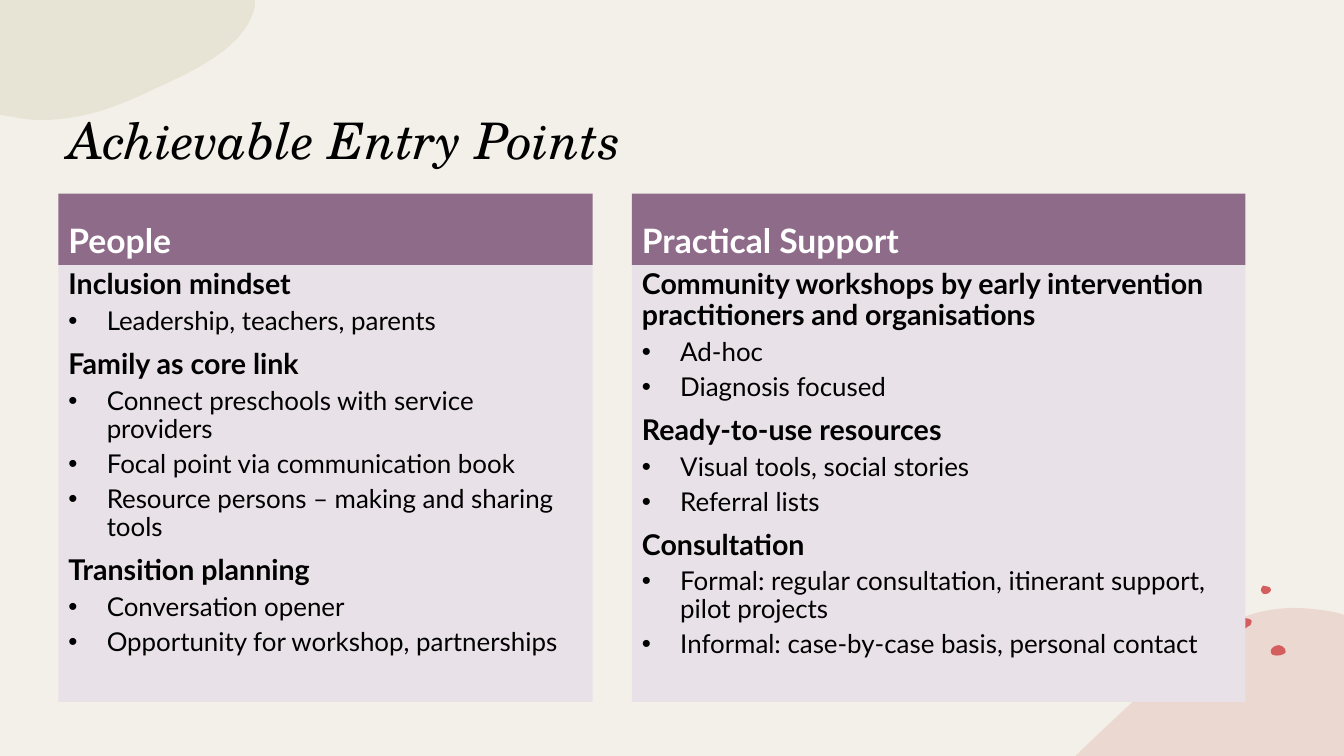
from dataclasses import dataclass

from lxml import etree
from pptx import Presentation
from pptx.dml.color import RGBColor
from pptx.enum.text import MSO_ANCHOR, MSO_AUTO_SIZE, PP_ALIGN
from pptx.oxml.ns import qn
from pptx.util import Inches, Pt

BOTTOM, TOP = MSO_ANCHOR.BOTTOM, MSO_ANCHOR.TOP
NO_AUTOFIT = MSO_AUTO_SIZE.NONE
LEFT = PP_ALIGN.LEFT

COMPARISON_LAYOUT = 4
COLUMNS, ROWS = 160, 90
CELL = Inches(7.5) / ROWS

Point = tuple[float, float]


@dataclass(frozen=True)
class Theme:
    background: str = "F3F0E9"
    header: str = "8F6B8A"
    panel: str = "E9E1E8"
    sage: str = "DCD9C3"
    blush: str = "E5C4BA"
    coral: str = "D45E5E"
    text: str = "000000"
    header_text: str = "FFFFFF"
    title_font: str = "TeX Gyre Schola"
    body_font: str = "Lato"
    title_size: float = 36
    header_size: float = 24
    topic_size: float = 20.4
    point_size: float = 18.5


@dataclass(frozen=True)
class Blob:
    """Closed outline: each segment is a line (one point) or a cubic curve (three)."""
    color: str
    start: Point
    segments: list[list[Point]]
    opacity: int = 100


@dataclass(frozen=True)
class Topic:
    name: str
    points: list[str]


@dataclass(frozen=True)
class Panel:
    heading: str
    left: float
    width: float
    topics: list[Topic]


THEME = Theme()
MARGIN = 6.95
TITLE_TOP, TITLE_WIDTH, TITLE_HEIGHT = 10.3, 132.25, 10.45
HEADER_TOP, HEADER_HEIGHT, BODY_HEIGHT = 23.05, 8.5, 52

BLOBS = [
    Blob(THEME.blush, (154.56, 72.36), [
        [(156.12, 72.48), (157.68, 72.6), (159.24, 72.96)],
        [(COLUMNS, 73.2)], [(COLUMNS, ROWS)], [(128.04, ROWS)], [(128.16, 89.88)],
        [(132.24, 85.92), (136.44, 82.08), (140.28, 78.48)],
        [(142.92, 75.84), (145.68, 74.28), (148.44, 73.32)],
        [(150.48, 72.6), (152.52, 72.36), (154.56, 72.36)]], 50),
    Blob(THEME.coral, (152.28, 76.8), [
        [(152.52, 76.8), (152.88, 77.04), (153, 77.28)],
        [(153.12, 77.52), (153.12, 77.76), (152.76, 77.88)],
        [(152.4, 78.12), (151.44, 78.12), (151.32, 77.76)],
        [(151.2, 77.52), (151.32, 77.28), (151.44, 77.16)],
        [(151.68, 76.92), (151.92, 76.8), (152.28, 76.8)]]),
    Blob(THEME.coral, (150.12, 70.32), [
        [(150.12, 70.32), (150.12, 69.84), (150.36, 69.72)],
        [(150.6, 69.72), (150.72, 69.72), (150.96, 69.84)],
        [(151.08, 69.84), (151.32, 69.96), (151.32, 70.2)],
        [(151.32, 70.32), (151.2, 70.56), (151.08, 70.56)],
        [(151.08, 70.56), (151.08, 70.68), (150.84, 70.68)],
        [(150.72, 70.68), (150.48, 70.8), (150.36, 70.68)],
        [(150.24, 70.44), (150.12, 70.44), (150.12, 70.32)]]),
    Blob(THEME.coral, (147.36, 73.56), [
        [(148.08, 73.56), (149.4, 73.56), (148.92, 74.28)],
        [(148.92, 74.4), (148.8, 74.52), (148.68, 74.52)],
        [(148.32, 74.76), (147.96, 75), (147.6, 75.24)],
        [(147.48, 75.36), (147.36, 75.48), (147.24, 75.36)],
        [(147.24, 75.36), (147.12, 75.24), (147.12, 75.24)],
        [(146.88, 74.76), (146.76, 74.4), (146.76, 73.92)],
        [(146.76, 73.8), (146.76, 73.68), (146.88, 73.56)],
        [(146.88, 73.56), (147, 73.56), (147, 73.56)],
        [(147.12, 73.56), (147.24, 73.56), (147.36, 73.56)]]),
    Blob(THEME.sage, (0, 0), [
        [(30.36, 0)], [(30.36, 0.72)],
        [(29.4, 5.28), (24, 8.04), (18.96, 10.32)],
        [(14.76, 12.36), (10.32, 14.28), (4.92, 14.28)],
        [(3.72, 14.28), (2.64, 14.16), (1.56, 13.92)],
        [(0, 13.68)], [(0, 0)]], 50),
]

PANELS = [
    Panel("People", MARGIN, 63.6, [
        Topic("Inclusion mindset", ["Leadership, teachers, parents"]),
        Topic("Family as core link", [
            "Connect preschools with service providers",
            "Focal point via communication book",
            "Resource persons – making and sharing tools"]),
        Topic("Transition planning", [
            "Conversation opener",
            "Opportunity for workshop, partnerships"])]),
    Panel("Practical Support", 75.22, 73.05, [
        Topic("Community workshops by early intervention practitioners and organisations",
              ["Ad-hoc", "Diagnosis focused"]),
        Topic("Ready-to-use resources", ["Visual tools, social stories", "Referral lists"]),
        Topic("Consultation", [
            "Formal: regular consultation, itinerant support, pilot projects",
            "Informal: case-by-case basis, personal contact"])]),
]


def cells(count: float) -> int:
    return round(count * CELL)


def fill_solid(fill, color: str) -> None:
    fill.solid()
    fill.fore_color.rgb = RGBColor.from_string(color)


def bend_lines(shape, segments: list[list[Point]]) -> None:
    """Turn the outline's straight steps into cubic curves where a segment has controls."""
    lines = list(shape.element.iter(qn("a:lnTo")))
    for line, segment in zip(lines, segments):
        if len(segment) == 1:
            continue
        line.tag = qn("a:cubicBezTo")
        for control in list(line):
            line.remove(control)
        for x, y in segment:
            point = etree.SubElement(line, qn("a:pt"))
            point.set("x", str(cells(x) - shape.left))
            point.set("y", str(cells(y) - shape.top))


def draw_blob(slide, blob: Blob) -> None:
    """Draw the outline behind the placeholders."""
    corners = [(cells(x), cells(y)) for x, y in
               [blob.start, *(segment[-1] for segment in blob.segments)]]
    builder = slide.shapes.build_freeform(*corners[0])
    builder.add_line_segments(corners[1:], close=True)
    shape = builder.convert_to_shape()
    bend_lines(shape, blob.segments)
    shape.shadow.inherit = False
    fill_solid(shape.fill, blob.color)
    shape.line.fill.background()
    if blob.opacity < 100:
        color = shape.element.spPr.find(".//" + qn("a:srgbClr"))
        etree.SubElement(color, qn("a:alpha")).set("val", str(blob.opacity * 1000))
    slide.shapes.title.element.addprevious(shape.element)


def place(shape, left: float, top: float, width: float, height: float, anchor) -> None:
    shape.left, shape.top = cells(left), cells(top)
    shape.width, shape.height = cells(width), cells(height)
    frame = shape.text_frame
    frame.word_wrap = True
    frame.auto_size = NO_AUTOFIT
    frame.vertical_anchor = anchor


def set_bullet(paragraph, bulleted: bool, hanging: bool) -> None:
    properties = paragraph._p.get_or_add_pPr()
    indent = Inches(0.38) if hanging else 0
    properties.set("marL", str(indent))
    properties.set("indent", str(-indent))
    if bulleted:
        etree.SubElement(properties, qn("a:buFont")).set("typeface", "Arial")
        etree.SubElement(properties, qn("a:buChar")).set("char", "•")
    else:
        etree.SubElement(properties, qn("a:buNone"))


def format_paragraph(paragraph, font: str, size: float, color: str, bold: bool = False,
                     italic: bool = False, spacing: float = 1, before: float = 0) -> None:
    paragraph.alignment = LEFT
    paragraph.line_spacing = spacing
    paragraph.space_before = Pt(before)
    paragraph.font.name = font
    paragraph.font.size = Pt(size)
    paragraph.font.bold = bold
    paragraph.font.italic = italic
    paragraph.font.color.rgb = RGBColor.from_string(color)


def fill_panel(panel: Panel, header, body) -> None:
    place(header, panel.left, HEADER_TOP, panel.width, HEADER_HEIGHT, BOTTOM)
    place(body, panel.left, HEADER_TOP + HEADER_HEIGHT, panel.width, BODY_HEIGHT, TOP)
    fill_solid(header.fill, THEME.header)
    fill_solid(body.fill, THEME.panel)
    header.text_frame.text = panel.heading
    format_paragraph(header.text_frame.paragraphs[0], THEME.body_font, THEME.header_size,
                     THEME.header_text, bold=True, spacing=1.1)
    lines = [(text, level) for topic in panel.topics
             for text, level in [(topic.name, 0), *((point, 1) for point in topic.points)]]
    body.text_frame.text = "\n".join(text for text, _ in lines)
    for index, (paragraph, (_, level)) in enumerate(zip(body.text_frame.paragraphs, lines)):
        paragraph.level = level
        set_bullet(paragraph, bulleted=level == 1, hanging=index > 0)
        format_paragraph(paragraph, THEME.body_font,
                         THEME.point_size if level else THEME.topic_size, THEME.text,
                         bold=level == 0, spacing=0.9,
                         before=0 if index == 0 else 5 if level else 10)


def main() -> None:
    presentation = Presentation()
    presentation.slide_width, presentation.slide_height = cells(COLUMNS), cells(ROWS)
    slide = presentation.slides.add_slide(presentation.slide_layouts[COMPARISON_LAYOUT])
    fill_solid(slide.background.fill, THEME.background)
    for blob in BLOBS:
        draw_blob(slide, blob)
    title, *boxes = slide.placeholders
    place(title, MARGIN, TITLE_TOP, TITLE_WIDTH, TITLE_HEIGHT, BOTTOM)
    title.text_frame.text = "Achievable Entry Points"
    format_paragraph(title.text_frame.paragraphs[0], THEME.title_font, THEME.title_size,
                     THEME.text, italic=True)
    for panel, header, body in zip(PANELS, boxes[::2], boxes[1::2]):
        fill_panel(panel, header, body)
    presentation.save("out.pptx")


if __name__ == "__main__":
    main()
